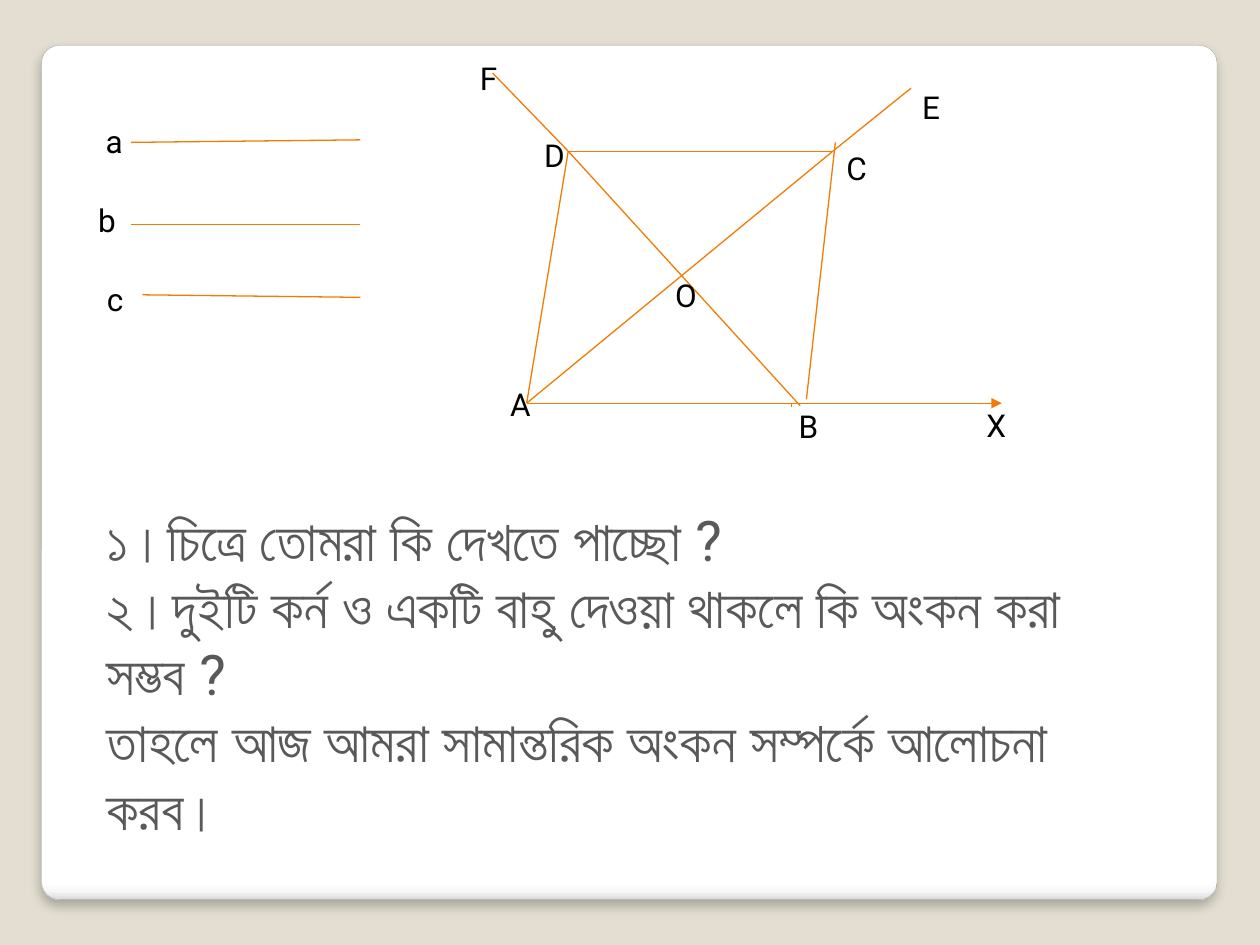
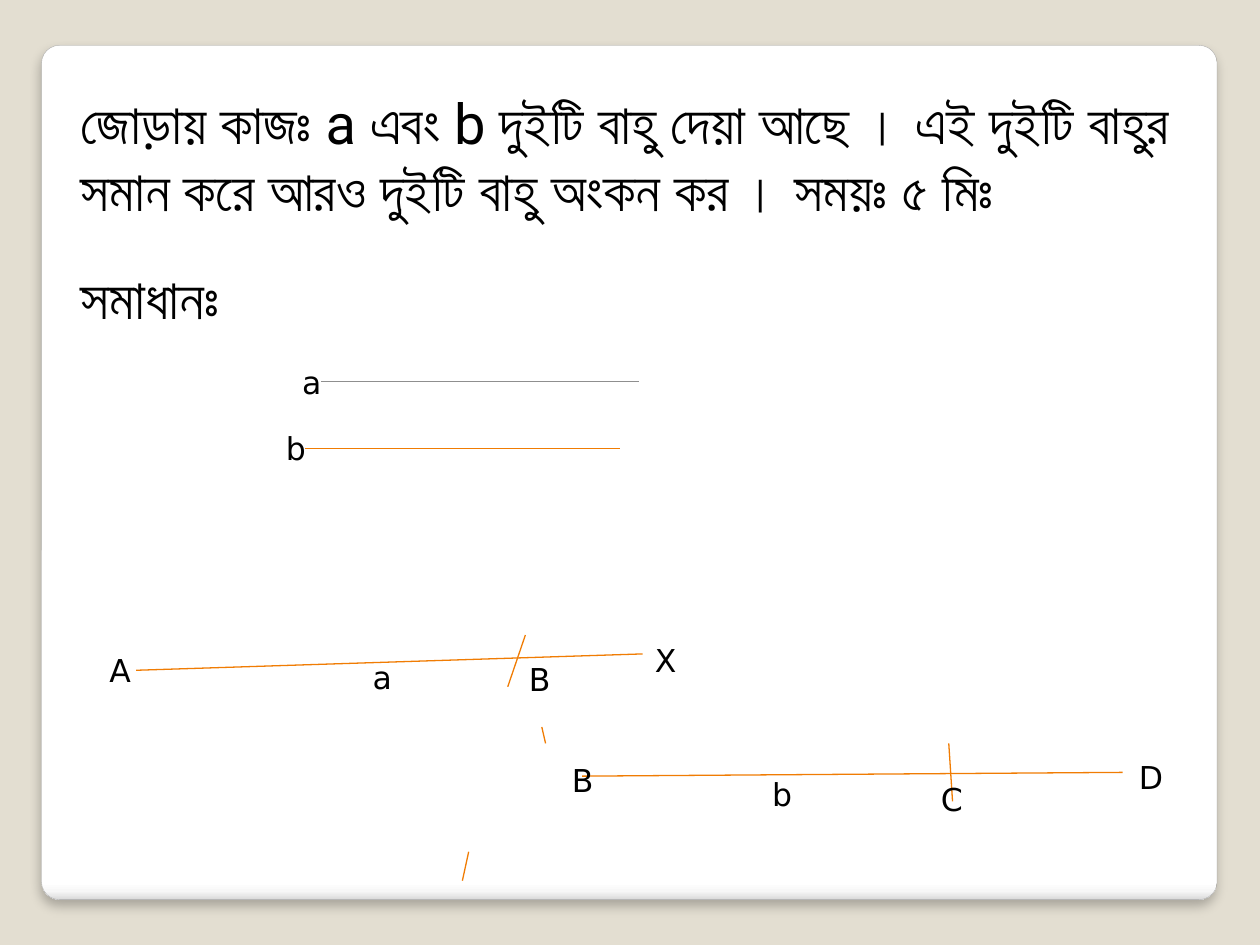
from dataclasses import dataclass

from lxml.etree import SubElement
from pptx import Presentation
from pptx.dml.color import RGBColor
from pptx.enum.shapes import MSO_CONNECTOR, MSO_SHAPE
from pptx.oxml import parse_xml
from pptx.oxml.ns import nsdecls, qn
from pptx.util import Inches, Pt


@dataclass(frozen=True)
class Theme:
    backdrop: str = "E3DED1"
    card: str = "FFFFFF"
    card_edge: str = "A4A4A4"
    card_stops: tuple = ((0, "FFFFFF"), (98, "FFFFFF"), (99, "F7F7F7"), (100, "DADADA"))
    stroke: str = "F07C03"
    pale_stroke: str = "8F8F8F"
    ink: str = "000000"
    soft_ink: str = "595959"
    body_font: str = "Roboto"
    sketch_font: str = "DejaVu Sans"
    body_size: int = 32
    label_size: int = 18
    stroke_width: float = 0.75


@dataclass(frozen=True)
class Box:
    left: float
    top: float
    width: float
    height: float


THEME = Theme()
CARD = Box(0.33, 0.36, 9.33, 6.78)
LABEL_HEIGHT = 0.4


def rgb(value):
    return RGBColor.from_string(value)


def inches(*values):
    return [Inches(value) for value in values]


def add_card_slide(deck):
    """Blank slide with the backdrop and the rounded white card."""
    slide = deck.slides.add_slide(deck.slide_layouts[6])
    slide.background.fill.solid()
    slide.background.fill.fore_color.rgb = rgb(THEME.backdrop)
    card = slide.shapes.add_shape(
        MSO_SHAPE.ROUNDED_RECTANGLE,
        *inches(CARD.left, CARD.top, CARD.width, CARD.height))
    card.adjustments[0] = 0.021
    card.line.color.rgb = rgb(THEME.card_edge)
    card.line.width = Pt(0.16)

    # Gradient that darkens only at the bottom edge
    stops = "".join(
        f'<a:gs pos="{position * 1000}"><a:srgbClr val="{color}"/></a:gs>'
        for position, color in THEME.card_stops)
    gradient = parse_xml(
        f'<a:gradFill {nsdecls("a")} rotWithShape="1"><a:gsLst>{stops}</a:gsLst>'
        '<a:lin ang="5400000" scaled="0"/></a:gradFill>')
    properties = card.element.spPr
    properties.find(qn("a:prstGeom")).addnext(gradient)

    # Soft shadow below the card
    properties.append(parse_xml(
        f'<a:effectLst {nsdecls("a")}>'
        f'<a:outerShdw blurRad="{Pt(6)}" dist="{Pt(4)}" dir="5400000" rotWithShape="0">'
        '<a:srgbClr val="000000"><a:alpha val="25000"/></a:srgbClr>'
        '</a:outerShdw></a:effectLst>'))
    return slide


def style_text(frame, lines, font, size, color):
    frame.word_wrap = True
    for index, line in enumerate(lines):
        paragraph = frame.paragraphs[0] if index == 0 else frame.add_paragraph()
        paragraph.text = line
        paragraph.font.name = font
        paragraph.font.size = Pt(size)
        paragraph.font.color.rgb = rgb(color)


def add_passage(slide, box, lines, color=THEME.ink, fill=None):
    passage = slide.shapes.add_textbox(*inches(box.left, box.top, box.width, box.height))
    if fill:
        passage.fill.solid()
        passage.fill.fore_color.rgb = rgb(fill)
    style_text(passage.text_frame, lines, THEME.body_font, THEME.body_size, color)


def add_stroke(slide, box, start, end, color=THEME.stroke, arrow=False):
    stroke = slide.shapes.add_connector(
        MSO_CONNECTOR.STRAIGHT,
        *inches(box.left + start[0], box.top + start[1],
                box.left + end[0], box.top + end[1]))
    stroke.line.color.rgb = rgb(color)
    stroke.line.width = Pt(THEME.stroke_width)
    if arrow:
        SubElement(stroke.line._get_or_add_ln(), qn("a:tailEnd"), type="triangle")
    SubElement(stroke.element.spPr, qn("a:effectLst"))
    return stroke


def add_label(slide, box, text, x, y, font, width=0.6):
    label = slide.shapes.add_textbox(
        *inches(box.left + x, box.top + y, width, LABEL_HEIGHT))
    style_text(label.text_frame, [text], font, THEME.label_size, THEME.ink)
    return label


def draw_sketch(slide, box, strokes, labels, font):
    """Strokes and point names, measured from the corner of the box."""
    for start, end in strokes:
        add_stroke(slide, box, start, end)
    for text, x, y in labels:
        add_label(slide, box, text, x, y, font)


def draw_given_sides(slide, box):
    draw_sketch(
        slide, box,
        [((0.44, 0.23), (2.26, 0.21)),
         ((0.44, 0.88), (2.26, 0.88)),
         ((0.53, 1.44), (2.26, 1.46))],
        [("a", 0.14, 0.02), ("b", 0.08, 0.65), ("c", 0.15, 1.27)],
        THEME.body_font)


def draw_parallelogram(slide, box):
    a, b, c, d = (0.48, 2.8), (2.65, 2.82), (2.91, 0.8), (0.81, 0.8)
    e, f, x = (3.53, 0.3), (0.21, 0.18), (4.25, 2.8)
    add_stroke(slide, box, a, x, arrow=True)
    draw_sketch(
        slide, box,
        [(a, d), (d, c), (c, a), (d, b), (c, e), (d, f),
         ((2.7, 2.77), (2.93, 0.73)),  # side BC
         ((2.58, 2.8), (2.58, 2.83))],  # mark beside B
        [("A", 0.25, 2.61), ("B", 2.54, 2.78), ("X", 4.03, 2.77), ("O", 1.56, 1.74),
         ("C", 2.92, 0.73), ("D", 0.52, 0.63), ("E", 3.52, 0.25), ("F", 0.01, 0.02)],
        THEME.body_font)


def draw_task_sides(slide, box):
    add_stroke(slide, box, (0.45, 0.23), (2.97, 0.23), THEME.pale_stroke)
    add_label(slide, box, "a", 0.2, 0.03, THEME.sketch_font)
    side_b = add_stroke(slide, box, (0.32, 0.76), (2.82, 0.76))
    name_b = add_label(slide, box, "b", 0.07, 0.56, THEME.sketch_font, width=0.25)
    side_b.begin_connect(name_b, 3)


def draw_copied_side_a(slide, box):
    draw_sketch(
        slide, box,
        [((0.38, 0.32), (4.4, 0.19)),  # ray AX
         ((3.33, 0.45), (3.47, 0.04))],  # cut at B
        [("A", 0.07, 0.12), ("X", 4.4, 0.04), ("a", 2.16, 0.17), ("B", 3.4, 0.19)],
        THEME.sketch_font)


def draw_copied_side_b(slide, box):
    draw_sketch(
        slide, box,
        [((1.02, 0.46), (5.31, 0.43)),  # ray BD
         ((3.93, 0.2), (3.96, 0.66)),  # cut at C
         ((0.7, 0.07), (0.73, 0.2)),  # loose compass marks
         ((0.12, 1.06), (0.07, 1.29))],
        [("B", 0.84, 0.29), ("D", 5.34, 0.27), ("C", 3.77, 0.44), ("b", 2.43, 0.4)],
        THEME.sketch_font)


def build_question_slide(deck):
    slide = add_card_slide(deck)
    add_passage(
        slide, Box(0.75, 3.96, 8.33, 2.79),
        ["১।চিত্রে তোমরা কি দেখতে পাচ্ছো ?",
         "২।দুইটি কর্ন ও একটি বাহু দেওয়া থাকলে কি অংকন করা সম্ভব ?",
         "তাহলে আজ আমরা সামান্তরিক অংকন সম্পর্কে আলোচনা করব।"],
        THEME.soft_ink, THEME.card)
    draw_given_sides(slide, Box(0.6, 0.9, 2.3, 1.7))
    draw_parallelogram(slide, Box(3.7, 0.4, 4.7, 3.2))


def build_pair_work_slide(deck):
    slide = add_card_slide(deck)
    add_passage(
        slide, Box(0.54, 0.65, 9.07, 1.18),
        ["জোড়ায় কাজঃ a এবং b দুইটি বাহু দেয়া আছে । এই দুইটি বাহুর "
         "সমান করে আরও দুইটি বাহু অংকন কর । সময়ঃ ৫ মিঃ"])
    add_passage(slide, Box(0.54, 2.04, 1.64, 0.64), ["সমাধানঃ"])
    draw_task_sides(slide, Box(2.1, 2.8, 3, 1))
    draw_copied_side_a(slide, Box(0.7, 5, 5, 0.6))
    draw_copied_side_b(slide, Box(3.6, 5.7, 6, 1.3))


def main():
    deck = Presentation()
    deck.slide_width, deck.slide_height = inches(10, 7.5)
    build_question_slide(deck)
    build_pair_work_slide(deck)
    deck.save("out.pptx")


if __name__ == "__main__":
    main()
